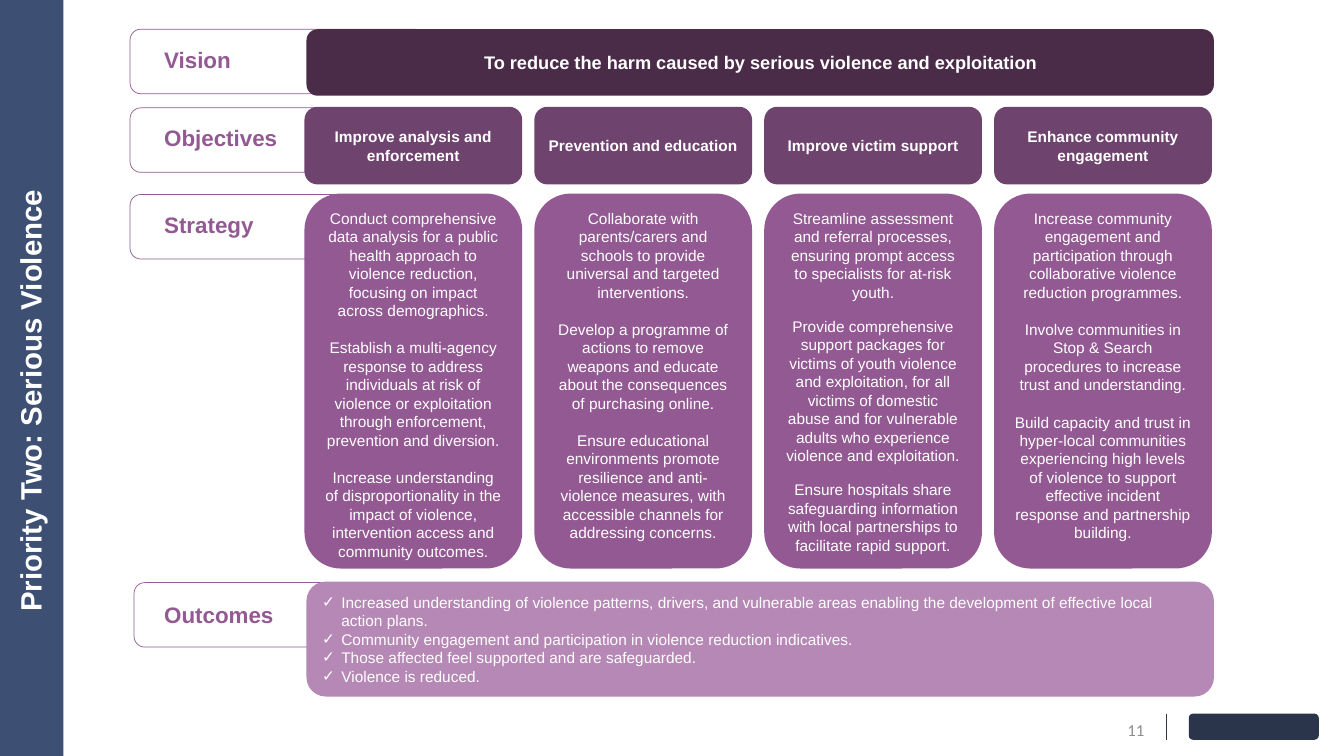
"""Build the serious violence strategy slide: vision, objectives, strategy and outcomes."""
from lxml import etree
from pptx import Presentation
from pptx.dml.color import RGBColor
from pptx.enum.shapes import MSO_CONNECTOR, MSO_SHAPE
from pptx.enum.text import MSO_ANCHOR, MSO_AUTO_SIZE, PP_ALIGN
from pptx.oxml.ns import qn
from pptx.util import Inches, Pt

COLOURS = {
    "white": "FFFFFF", "sidebar": "3D5073", "vision": "4A2C49", "objective": "6E436E",
    "strategy": "935992", "outcome": "B688B5", "navy": "2A354C", "number": "918C8A",
}
TITLE = "Priority Two: Serious Violence"
PAGE_NUMBER = "11"
VISION = "To reduce the harm caused by serious violence and exploitation"
ROW_LABELS = [
    ("Vision", 1.29, 0.29, 0.44),
    ("Objectives", 1.29, 1.07, 1.21),
    ("Strategy", 1.29, 1.93, 2.08),
    ("Outcomes", 1.33, 5.78, 5.94),
]
COLUMNS = [
    ("Improve analysis and enforcement", 13.25, [
        "Conduct comprehensive data analysis for a public health approach to violence reduction, focusing on impact across demographics.",
        "Establish a multi-agency response to address individuals at risk of violence or exploitation through enforcement, prevention and diversion.",
        "Increase understanding of disproportionality in the impact of violence, intervention access and community outcomes.",
    ]),
    ("Prevention and education", 13.25, [
        "Collaborate with parents/carers and schools to provide universal and targeted interventions.",
        "Develop a programme of actions to remove weapons and educate about the consequences of purchasing online.",
        "Ensure educational environments promote resilience and anti-violence measures, with accessible channels for addressing concerns.",
    ]),
    ("Improve victim support", 11, [
        "Streamline assessment and referral processes, ensuring prompt access to specialists for at-risk youth.",
        "Provide comprehensive support packages for victims of youth violence and exploitation, for all victims of domestic abuse and for vulnerable adults who experience violence and exploitation.",
        "Ensure hospitals share safeguarding information with local partnerships to facilitate rapid support.",
    ]),
    ("Enhance community engagement", 13.25, [
        "Increase community engagement and participation through collaborative violence reduction programmes.",
        "Involve communities in Stop & Search procedures to increase trust and understanding.",
        "Build capacity and trust in hyper-local communities experiencing high levels of violence to support effective incident response and partnership building.",
    ]),
]
OUTCOMES = [
    "Increased understanding of violence patterns, drivers, and vulnerable areas enabling the development of effective local action plans.",
    "Community engagement and participation in violence reduction indicatives.",
    "Those affected feel supported and are safeguarded.",
    "Violence is reduced.",
]
COLUMN_LEFT, COLUMN_WIDTH, COLUMN_PITCH = 3.02, 2.16, 2.28
PANEL_LEFT, PANEL_WIDTH = 3.04, 9


def rgb(name):
    return RGBColor.from_string(COLOURS[name])


def write(shape, lines, size=11, colour="white", bold=False, font="Arial", align=PP_ALIGN.CENTER,
          anchor=MSO_ANCHOR.MIDDLE, gap=0, spacing=None):
    """Fill a shape with formatted paragraphs."""
    frame = shape.text_frame
    frame.word_wrap = True
    frame.auto_size = MSO_AUTO_SIZE.NONE
    frame.vertical_anchor = anchor
    for index, line in enumerate(lines):
        paragraph = frame.add_paragraph() if index else frame.paragraphs[0]
        paragraph.alignment = align
        paragraph.space_before = Pt(gap if index else 0)
        if spacing:
            paragraph.line_spacing = spacing
        run = paragraph.add_run()
        run.text = line
        run.font.size, run.font.bold, run.font.name = Pt(size), bold, font
        run.font.color.rgb = rgb(colour)


def place(shape, left, top, width, height):
    shape.left, shape.top = Inches(left), Inches(top)
    shape.width, shape.height = Inches(width), Inches(height)


def add_box(slide, left, top, width, height, fill=None, line=None, kind=MSO_SHAPE.ROUNDED_RECTANGLE):
    box = slide.shapes.add_shape(kind, *map(Inches, (left, top, width, height)))
    box.shadow.inherit = False
    if fill:
        box.fill.solid()
        box.fill.fore_color.rgb = rgb(fill)
    else:
        box.fill.background()
    if line:
        box.line.color.rgb = rgb(line)
        box.line.width = Pt(0.5)
    else:
        box.line.fill.background()
    return box


def add_textbox(slide, left, top, width, height):
    return slide.shapes.add_textbox(*map(Inches, (left, top, width, height)))


def bring_to_front(shape):
    shape._element.getparent().append(shape._element)


def add_footer(slide):
    number = add_textbox(slide, 10.69, 7.04, 0.76, 0.4)
    write(number, [PAGE_NUMBER], size=12, colour="number", font="Calibri", align=PP_ALIGN.RIGHT)
    divider = slide.shapes.add_connector(
        MSO_CONNECTOR.STRAIGHT, Inches(11.57), Inches(7.08), Inches(11.57), Inches(7.34))
    divider.line.color.rgb = rgb("navy")
    divider.line.width = Pt(0.5)
    etree.SubElement(divider._element.spPr, qn("a:effectLst"))
    add_box(slide, 11.79, 7.08, 1.29, 0.26, fill="navy")


def add_title(slide):
    title = slide.shapes.title
    place(title, -1.75, 3.34, 4.64, 0.82)
    title.rotation = 270
    frame = title.text_frame
    frame.margin_left = frame.margin_top = frame.margin_bottom = 0
    frame.margin_right = Inches(0.1)
    write(title, [TITLE], size=21, bold=True, align=PP_ALIGN.LEFT, anchor=MSO_ANCHOR.TOP, spacing=0.9)
    bring_to_front(title)


def add_outcomes(slide):
    outcomes = slide.placeholders[1]
    place(outcomes, PANEL_LEFT, 5.77, PANEL_WIDTH, 1.14)
    geometry = etree.SubElement(outcomes._element.spPr, qn("a:prstGeom"), prst="roundRect")
    etree.SubElement(geometry, qn("a:avLst"))
    outcomes.fill.solid()
    outcomes.fill.fore_color.rgb = rgb("outcome")
    write(outcomes, OUTCOMES, align=PP_ALIGN.LEFT)
    for paragraph in outcomes.text_frame.paragraphs:
        properties = paragraph._p.get_or_add_pPr()
        properties.set("marL", str(Inches(0.19)))
        properties.set("indent", str(-Inches(0.19)))
        etree.SubElement(properties, qn("a:buChar"), char="✓")
    bring_to_front(outcomes)


def main():
    deck = Presentation()
    deck.slide_width, deck.slide_height = Inches(13.33), Inches(7.5)
    slide = deck.slides.add_slide(deck.slide_layouts[1])

    add_box(slide, 0, 0, 0.63, 7.5, fill="sidebar", kind=MSO_SHAPE.RECTANGLE)
    add_footer(slide)
    add_title(slide)

    for label, left, top, text_top in ROW_LABELS:
        add_box(slide, left, top, 2.93, 0.64, line="strategy")
        heading = add_textbox(slide, 1.53, text_top, 1.59, 0.34)
        write(heading, [label], size=16, colour="strategy", bold=True,
              align=PP_ALIGN.LEFT, anchor=MSO_ANCHOR.TOP, spacing=0.9)

    vision = add_box(slide, PANEL_LEFT, 0.29, PANEL_WIDTH, 0.66, fill="vision")
    write(vision, [VISION], size=13, bold=True)

    for index, (objective, gap, actions) in enumerate(COLUMNS):
        left = COLUMN_LEFT + index * COLUMN_PITCH
        header = add_box(slide, left, 1.06, COLUMN_WIDTH, 0.77, fill="objective")
        write(header, [objective], bold=True)
        strategy = add_box(slide, left, 1.92, COLUMN_WIDTH, 3.72, fill="strategy")
        write(strategy, actions, anchor=MSO_ANCHOR.TOP, gap=gap)

    add_outcomes(slide)
    deck.save("out.pptx")


if __name__ == "__main__":
    main()
